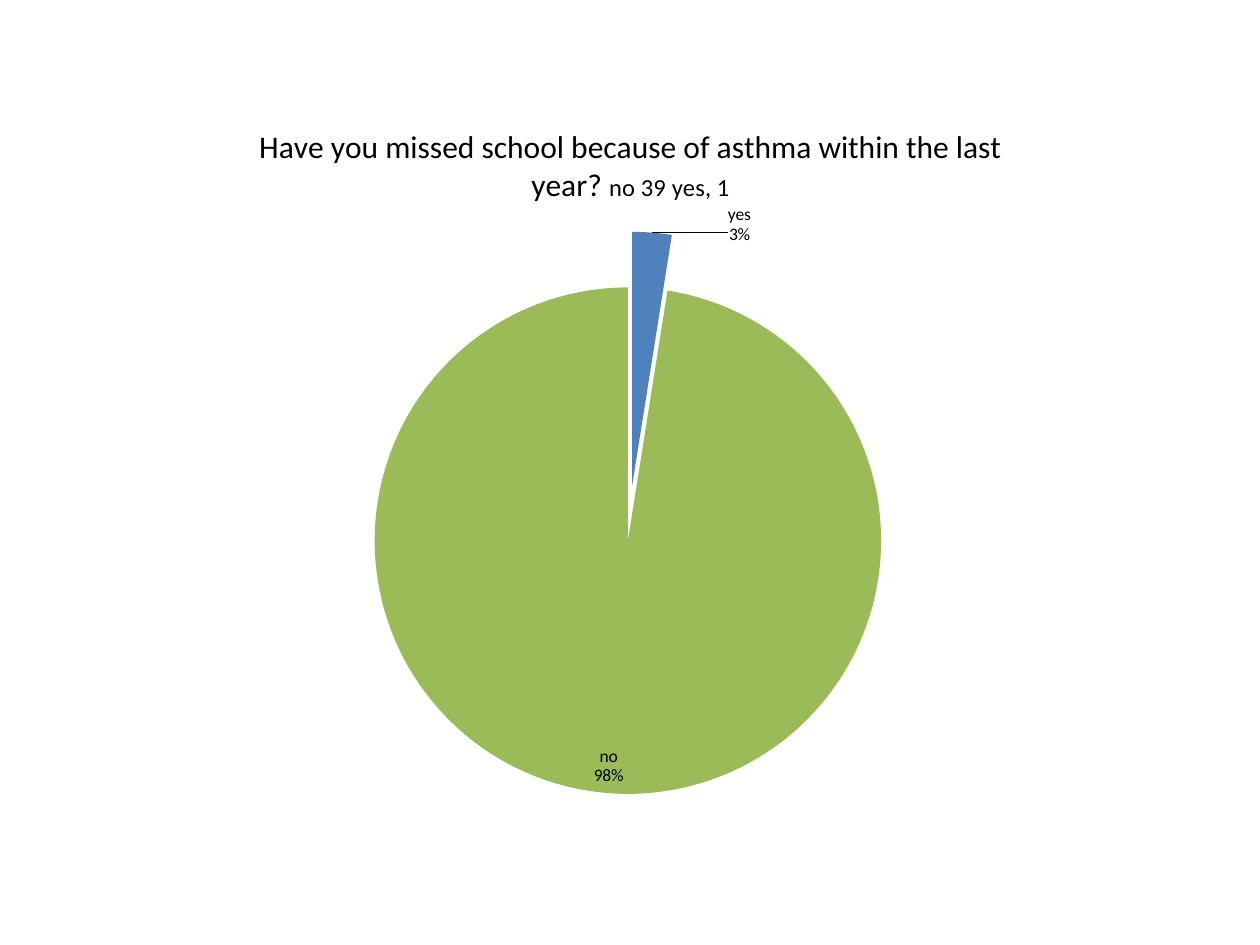
from lxml import etree
from pptx import Presentation
from pptx.chart.data import CategoryChartData
from pptx.dml.color import RGBColor
from pptx.enum.chart import XL_CHART_TYPE as ChartType, XL_LABEL_POSITION as LabelPos
from pptx.oxml import parse_xml
from pptx.oxml.ns import nsdecls, qn
from pptx.util import Inches, Pt


def color(hex_code):
    return RGBColor.from_string(hex_code)


def manual_layout(modes=(), **percents):
    """Layout element; lengths are percentages of the chart's size."""
    settings = dict(modes) | {tag: round(p / 100, 3) for tag, p in percents.items()}
    values = "".join(f'<c:{tag} val="{value}"/>' for tag, value in settings.items())
    return parse_xml(f'<c:layout {nsdecls("c")}><c:manualLayout>{values}'
                     '</c:manualLayout></c:layout>')


deck = Presentation()
deck.slide_width, deck.slide_height = Inches(10), Inches(7.5)
slide = deck.slides.add_slide(deck.slide_layouts[6])

# Number of answers, with one unnamed category between them
answers = CategoryChartData()
answers.categories = ["yes", "", "no"]
answers.add_series("Series 1", (1, None, 39))
chart = slide.shapes.add_chart(ChartType.PIE, Inches(1.05), Inches(0.8),
                               Inches(7.91), Inches(5.91), answers).chart
chart.has_legend = False
for attribute, value in {"name": "Calibri", "size": Pt(10)}.items():
    setattr(chart.font, attribute, value)
chart.font.color.rgb = color("000000")

# Title: the question, then the counts in smaller type
question = chart.chart_title.text_frame.paragraphs[0]
for words, size in (("Have you missed school because of asthma within the last year? ", 18),
                    ("no 39 yes, 1", 14)):
    run = question.add_run()
    run.text = words
    for attribute, value in {"name": "Calibri", "size": Pt(size), "bold": False}.items():
        setattr(run.font, attribute, value)
    run.font.color.rgb = color("000000")
chart.chart_title.include_in_layout = False

# Pie area
plot = chart.plots[0]
plot.vary_by_categories = True
plot_area = chart._chartSpace.chart.plotArea
for old_layout in plot_area.findall(qn("c:layout")):
    plot_area.remove(old_layout)
inner_edges = {"layoutTarget": "inner", "xMode": "edge", "yMode": "edge"}
plot_area.insert(0, manual_layout(inner_edges, x=21.7, y=17.6, w=56.5, h=75.5))

# Slices, pulled apart
pie = plot.series[0]
for index, fill in enumerate(("4F81BD", "C0504D", "9BBB59")):
    slice_fill = pie.points[index].format.fill
    slice_fill.solid()
    slice_fill.fore_color.rgb = color(fill)
explosion = etree.Element(qn("c:explosion"), val="11")
pie._element.find(qn("c:dPt")).addprevious(explosion)

# Labels: category over percentage
labels = pie.data_labels
for attribute, value in {"show_category_name": True, "show_percentage": True,
                         "show_value": False, "show_legend_key": False,
                         "position": LabelPos.INSIDE_END}.items():
    setattr(labels, attribute, value)
label_xml = labels._element
for tag in ("c:separator", "c:showLeaderLines"):
    for old in label_xml.findall(qn(tag)):
        label_xml.remove(old)
separator = etree.SubElement(label_xml, qn("c:separator"))
separator.text = "\n"
etree.SubElement(label_xml, qn("c:showLeaderLines"), val="1")

# The small slice has its label outside, moved to the right
yes_label = parse_xml(
    f'<c:dLbl {nsdecls("c")}><c:idx val="0"/><c:dLblPos val="outEnd"/>'
    '<c:showLegendKey val="0"/><c:showVal val="0"/><c:showCatName val="1"/>'
    '<c:showSerName val="0"/><c:showPercent val="1"/><c:showBubbleSize val="0"/>'
    '<c:separator>\n</c:separator></c:dLbl>')
yes_label.insert(1, manual_layout(x=8.7, y=2.6))
label_xml.insert(0, yes_label)

deck.save("out.pptx")
